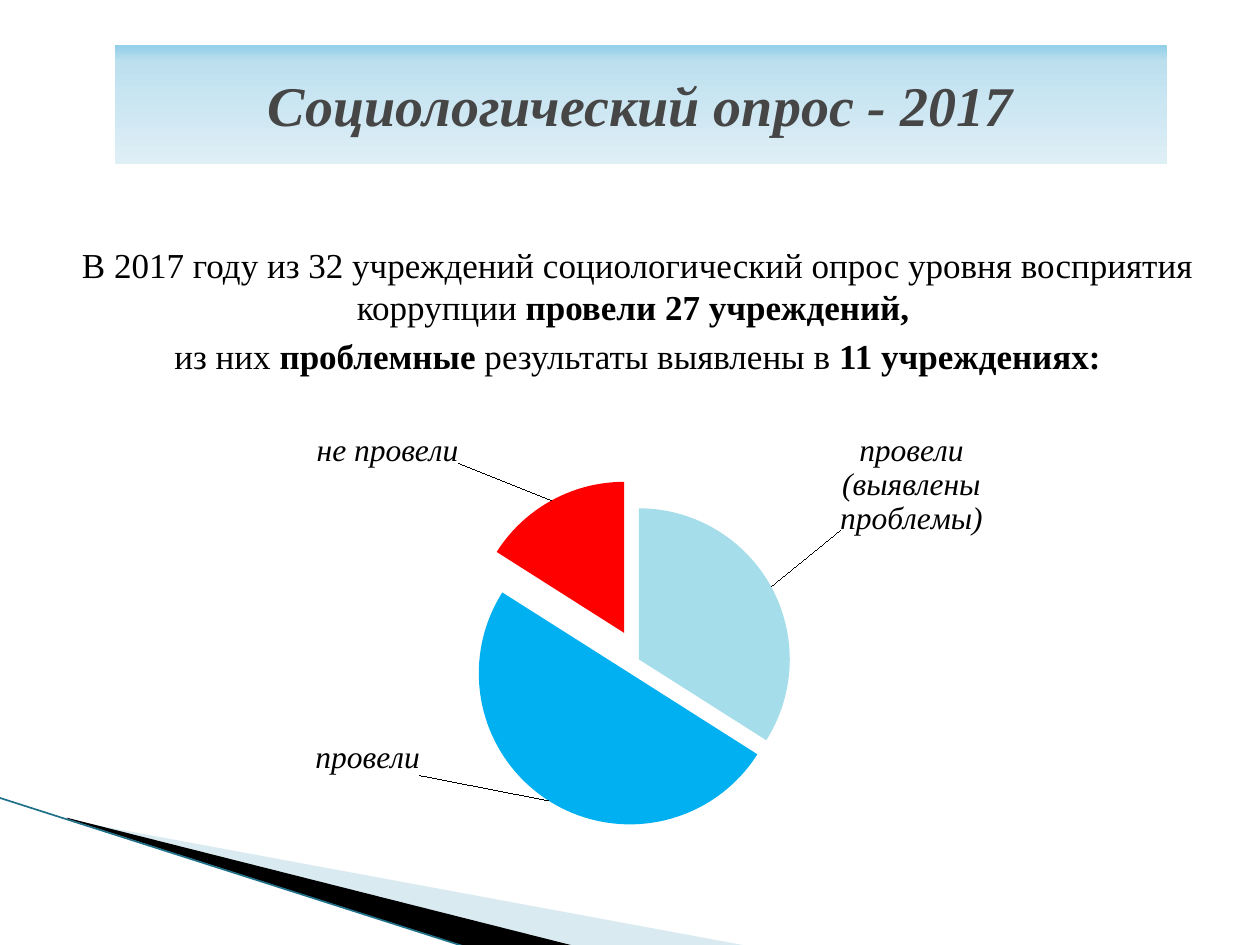
from copy import deepcopy

from lxml import etree
from pptx import Presentation
from pptx.chart.data import CategoryChartData
from pptx.dml.color import RGBColor
from pptx.enum.chart import XL_CHART_TYPE, XL_LABEL_POSITION
from pptx.enum.shapes import MSO_CONNECTOR, MSO_SHAPE
from pptx.enum.text import MSO_ANCHOR, PP_ALIGN
from pptx.oxml import parse_xml
from pptx.oxml.ns import nsdecls, qn
from pptx.util import Inches, Pt

FONT = "Times New Roman"
COLORS = {
    "text": "000000",
    "title": "464646",
    "title_top": "92CFE8",
    "title_middle": "BDE0EF",
    "title_bottom": "DFEFF6",
    "pale_wedge": "A0CBDC",
    "dark_wedge": "000000",
    "edge": "1F7088",
}
SUMMARY = [
    [("В 2017 году из 32 учреждений социологический опрос уровня восприятия коррупции ", False),
     ("провели 27 учреждений, ", True)],
    [("из них ", False), ("проблемные", True),
     (" результаты выявлены в ", False), ("11 учреждениях:", True)],
]
SURVEY_VALUES = [34, 50, 16, None]
# Fill, explosion, label and label shift (fractions of the chart size)
SLICES = [
    ("A6DDEA", 0, "провели (выявлены проблемы)", (0.07, -0.12)),
    ("00B0F0", 11, "провели", (-0.14, -0.15)),
    ("FF0000", 20, "не провели", (-0.1, -0.07)),
    ("39639D", 11, None, None),
]


def rgb(name):
    return RGBColor.from_string(COLORS[name])


def style_font(font, size, color="text", bold=False, italic=False):
    font.name = FONT
    font.size = Pt(size)
    font.bold = bold
    font.italic = italic
    font.color.rgb = rgb(color)


def set_frame(wedge, frame):
    """Give the wedge a new frame while its corners stay in place."""
    left, top, width, height = map(Inches, frame)
    shift_x, shift_y = wedge.left - left, wedge.top - top
    outline = wedge._element.spPr.find(".//" + qn("a:path"))
    outline.set("w", str(width))
    outline.set("h", str(height))
    for corner in outline.iter(qn("a:pt")):
        corner.set("x", str(int(corner.get("x")) + shift_x))
        corner.set("y", str(int(corner.get("y")) + shift_y))
    wedge.left, wedge.top, wedge.width, wedge.height = left, top, width, height


def add_wedge(slide, frame, points, color, opacity=100):
    corners = [(Inches(x), Inches(y)) for x, y in points]
    builder = slide.shapes.build_freeform(*corners[0])
    builder.add_line_segments(corners[1:], close=True)
    wedge = builder.convert_to_shape()
    set_frame(wedge, frame)
    wedge.shadow.inherit = False
    wedge.line.fill.background()
    wedge.fill.solid()
    wedge.fill.fore_color.rgb = rgb(color)
    if opacity < 100:
        tint = wedge._element.spPr.find(".//" + qn("a:srgbClr"))
        etree.SubElement(tint, qn("a:alpha")).set("val", str(opacity * 1000))


def add_edge(slide, start, end):
    edge = slide.shapes.add_connector(
        MSO_CONNECTOR.STRAIGHT, *map(Inches, start + end))
    edge.line.color.rgb = rgb("edge")
    edge.line.width = Pt(0.95)
    etree.SubElement(edge._element.spPr, qn("a:effectLst"))


def add_title(slide, wording):
    banner = slide.shapes.add_shape(
        MSO_SHAPE.RECTANGLE, Inches(0.91), Inches(0.36), Inches(8.35), Inches(0.94))
    banner.shadow.inherit = False
    banner.line.fill.background()
    banner.fill.gradient()
    banner.fill.gradient_angle = 270
    stop_list = banner._element.spPr.find(".//" + qn("a:gsLst"))
    stop_list.insert(1, deepcopy(stop_list[0]))
    shades = [(0, "title_top"), (0.14, "title_middle"), (1, "title_bottom")]
    for stop, (position, shade) in zip(banner.fill.gradient_stops, shades):
        stop.position = position
        stop.color.rgb = rgb(shade)
    frame = banner.text_frame
    frame.vertical_anchor = MSO_ANCHOR.MIDDLE
    frame.text = wording
    heading = frame.paragraphs[0]
    heading.alignment = PP_ALIGN.CENTER
    style_font(heading.runs[0].font, 32, "title", bold=True, italic=True)


def add_summary(slide, sentences):
    frame = slide.shapes.add_textbox(
        Inches(0.39), Inches(1.88), Inches(9.22), Inches(1.2)).text_frame
    frame.word_wrap = True
    for index, sentence in enumerate(sentences):
        paragraph = frame.add_paragraph() if index else frame.paragraphs[0]
        paragraph._p.get_or_add_pPr().set("marL", str(Inches(0.12)))
        paragraph.alignment = PP_ALIGN.CENTER
        if index:
            paragraph.space_before = Pt(4)
        for wording, bold in sentence:
            run = paragraph.add_run()
            run.text = wording
            style_font(run.font, 20, bold=bold)


def manual_layout(**settings):
    """Return a c:layout element with the given manual settings."""
    entries = "".join(f'<c:{key} val="{value}"/>' for key, value in settings.items())
    return parse_xml(
        f'<c:layout {nsdecls("c")}><c:manualLayout>{entries}</c:manualLayout></c:layout>')


def explosion(percent):
    return parse_xml(f'<c:explosion {nsdecls("c")} val="{percent}"/>')


def label_slice(point, wording, shift):
    label = point.data_label
    label.text_frame.text = wording
    style_font(label.text_frame.paragraphs[0].runs[0].font, 18, italic=True)
    label.position = XL_LABEL_POSITION.OUTSIDE_END
    label._dLbl.find(qn("c:idx")).addnext(manual_layout(x=shift[0], y=shift[1]))


def add_survey_pie(slide):
    survey = CategoryChartData()
    survey.categories = ["1", "2", "3", "4"]
    survey.add_series("Series 1", SURVEY_VALUES)
    chart = slide.shapes.add_chart(
        XL_CHART_TYPE.PIE, Inches(1.61), Inches(3.44), Inches(7.09), Inches(3.48), survey).chart
    chart.has_title = False
    chart.has_legend = False
    style_font(chart.font, 18)
    plot = chart.plots[0]
    plot.vary_by_categories = True

    plot_area = chart._chartSpace.chart.plotArea
    for layout in plot_area.findall(qn("c:layout")):
        plot_area.remove(layout)
    plot_area.insert(0, manual_layout(
        layoutTarget="inner", xMode="edge", yMode="edge", x=0.076, y=0.133, w=0.824, h=0.765))

    series = plot.series[0]
    for index, (fill, percent, wording, shift) in enumerate(SLICES):
        point = series.points[index]
        point.format.fill.solid()
        point.format.fill.fore_color.rgb = RGBColor.from_string(fill)
        slice_xml = series._element.findall(qn("c:dPt"))[index]
        slice_xml.find(qn("c:spPr")).addprevious(explosion(percent))
        if wording:
            label_slice(point, wording, shift)
    series.data_labels.show_value = False
    series._element.find(qn("c:dPt")).addprevious(explosion(11))


def main():
    deck = Presentation()
    deck.slide_width, deck.slide_height = Inches(10), Inches(7.5)
    slide = deck.slides.add_slide(deck.slide_layouts[6])
    add_wedge(slide, (0.78, 5.47, 4.16, 1.58),
              [(0.55, 6.51), (5.95, 7.51), (4.56, 7.51), (0.55, 6.5)],
              "pale_wedge", opacity=40)
    add_wedge(slide, (-0.06, 6.33, 4.16, 0.92),
              [(0.53, 6.49), (4.57, 7.51), (3.72, 7.52), (0.54, 6.5)], "dark_wedge")
    add_edge(slide, (-0.01, 6.33), (3.71, 7.52))
    add_summary(slide, SUMMARY)
    add_title(slide, "Социологический опрос - 2017")
    add_survey_pie(slide)
    deck.save("out.pptx")


if __name__ == "__main__":
    main()
